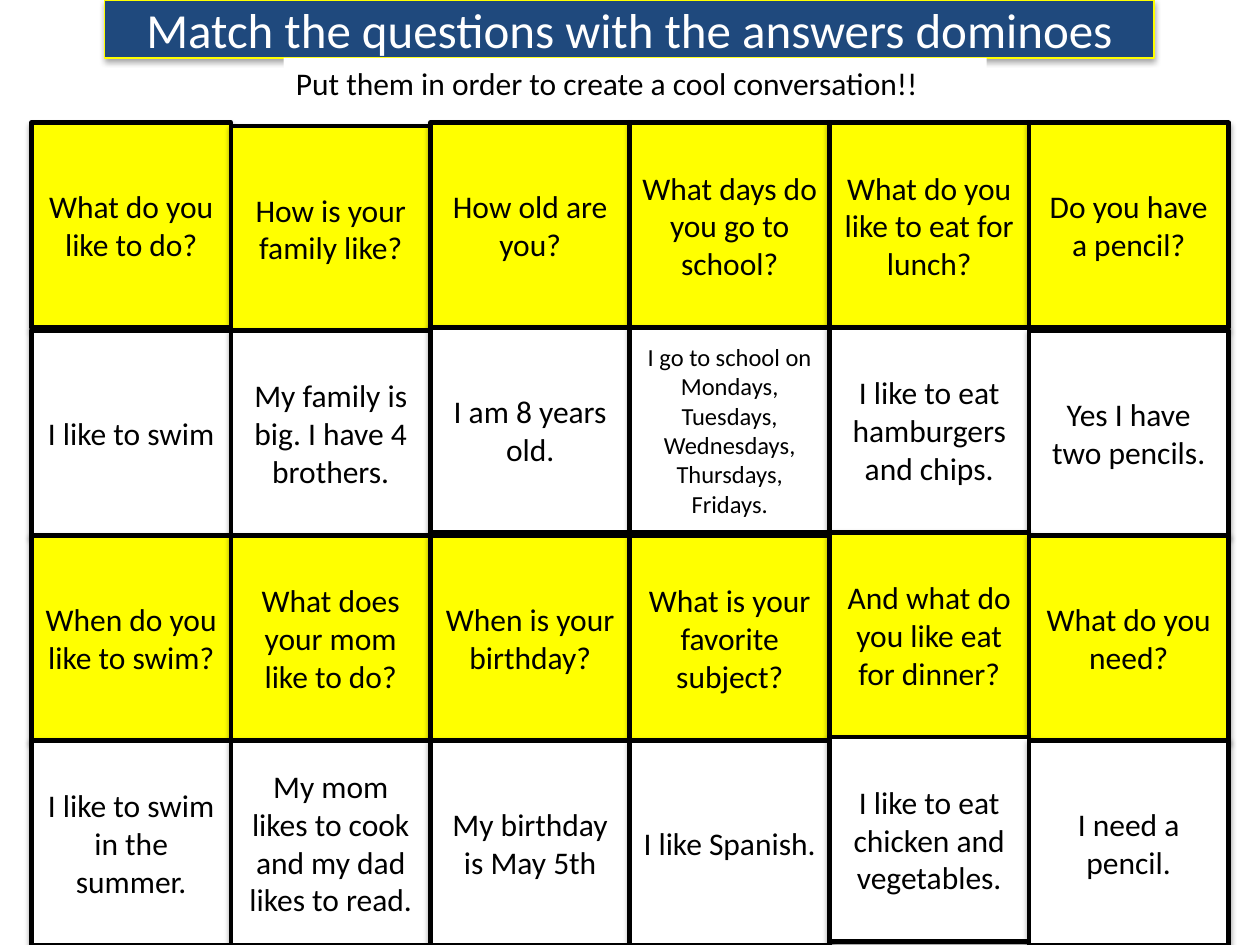
from dataclasses import dataclass

from lxml import etree
from pptx import Presentation
from pptx import util as u
from pptx.dml.color import RGBColor
from pptx.enum import shapes, text
from pptx.oxml import ns


@dataclass(frozen=True)
class Theme:
    font: str = "Calibri"
    black: str = "000000"
    white: str = "FFFFFF"
    yellow: str = "FFFF00"
    navy: str = "1F497D"
    title_size: int = 28
    body_size: int = 18
    small_size: int = 14
    card_line: float = 2.75
    title_line: float = 0.75


THEME = Theme()

# Card grid: each column has its first few rows nudged up slightly
LEFT, TOP = 0.25, 1.0
COL_PITCH, ROW_PITCH = 9.5 / 6, 1.625
NUDGE = 0.025
NUDGED_ROWS = [1, 0, 2, 2, 4, 1]

LONG_ANSWER = "I go to school on Mondays, Tuesdays, Wednesdays, Thursdays, Fridays."
CARDS = [
    ["What do you like to do?", "How is your family like?", "How old are you?",
     "What days do you go to school?", "What do you like to eat for lunch?",
     "Do you have a pencil?"],
    ["I like to swim", "My family is big. I have 4 brothers.",
     "I am 8 years old.", LONG_ANSWER,
     "I like to eat hamburgers and chips.", "Yes I have two pencils."],
    ["When do you like to swim?", "What does your mom like to do?",
     "When is your birthday?", "What is your favorite subject?",
     "And what do you like eat for dinner?", "What do you need?"],
    ["I like to swim in the summer.",
     "My mom likes to cook and my dad likes to read.",
     "My birthday is May 5th", "I like Spanish.",
     "I like to eat chicken and vegetables.", "I need a pencil."],
]


def rgb(value):
    return RGBColor.from_string(value)


def set_text(s, words, size, color, align, **frame):
    tf = s.text_frame
    for name, value in {"word_wrap": True, **frame}.items():
        setattr(tf, name, value)
    p = tf.paragraphs[0]
    p.alignment = align
    r = p.add_run()
    r.text = words
    for name, value in {"name": THEME.font, "size": u.Pt(size)}.items():
        setattr(r.font, name, value)
    r.font.color.rgb = rgb(color)


def add_shadow(s):
    s.shadow.inherit = False
    effects = s._element.spPr.find(ns.qn("a:effectLst"))
    shadow = etree.SubElement(effects, ns.qn("a:outerShdw"), blurRad="40000",
                              dist="23000", dir="5400000", rotWithShape="0")
    color = etree.SubElement(shadow, ns.qn("a:srgbClr"), val=THEME.black)
    etree.SubElement(color, ns.qn("a:alpha"), val="35000")


def set_box_style(s, fill, line, width):
    s.fill.solid()
    s.fill.fore_color.rgb = rgb(fill)
    s.line.color.rgb = rgb(line)
    s.line.width = u.Pt(width)
    add_shadow(s)


def add_title(slide, words):
    s = slide.shapes.title
    box = {"left": 0.83, "top": 0, "width": 8.33, "height": 0.46}
    for name, value in box.items():
        setattr(s, name, u.Inches(value))
    # Rounded outline for the title placeholder
    geometry = etree.Element(ns.qn("a:prstGeom"), prst="roundRect")
    etree.SubElement(geometry, ns.qn("a:avLst"))
    s._element.spPr.insert(1, geometry)
    set_box_style(s, THEME.navy, THEME.yellow, THEME.title_line)
    set_text(s, words, THEME.title_size, THEME.white, text.PP_ALIGN.CENTER,
             vertical_anchor=text.MSO_ANCHOR.MIDDLE,
             auto_size=text.MSO_AUTO_SIZE.NONE)


def add_instruction(slide, words):
    s = slide.shapes.add_textbox(u.Inches(2.25), u.Inches(0.46),
                                 u.Inches(5.58), u.Inches(0.4))
    s.fill.solid()
    s.fill.fore_color.rgb = rgb(THEME.white)
    set_text(s, words, THEME.body_size, THEME.black, text.PP_ALIGN.LEFT,
             auto_size=text.MSO_AUTO_SIZE.SHAPE_TO_FIT_TEXT)


def add_card(slide, row, col, words):
    top = TOP + row * ROW_PITCH
    if row < NUDGED_ROWS[col]:
        top -= NUDGE
    s = slide.shapes.add_shape(
        shapes.MSO_SHAPE.RECTANGLE, u.Inches(LEFT + col * COL_PITCH),
        u.Inches(top), u.Inches(COL_PITCH), u.Inches(ROW_PITCH))
    fill = THEME.white if row % 2 else THEME.yellow
    set_box_style(s, fill, THEME.black, THEME.card_line)
    size = THEME.small_size if words == LONG_ANSWER else THEME.body_size
    set_text(s, words, size, THEME.black, text.PP_ALIGN.CENTER,
             vertical_anchor=text.MSO_ANCHOR.MIDDLE)


def main():
    prs = Presentation()
    prs.slide_width, prs.slide_height = u.Inches(10), u.Inches(7.5)
    slide = prs.slides.add_slide(prs.slide_layouts[5])

    # Heading
    add_title(slide, "Match the questions with the answers dominoes")

    # Question rows alternate with answer rows
    for row, line in enumerate(CARDS):
        for col, words in enumerate(line):
            add_card(slide, row, col, words)

    # Instruction under the heading
    add_instruction(slide, "Put them in order to create a cool conversation!!")

    prs.save("out.pptx")


if __name__ == "__main__":
    main()
